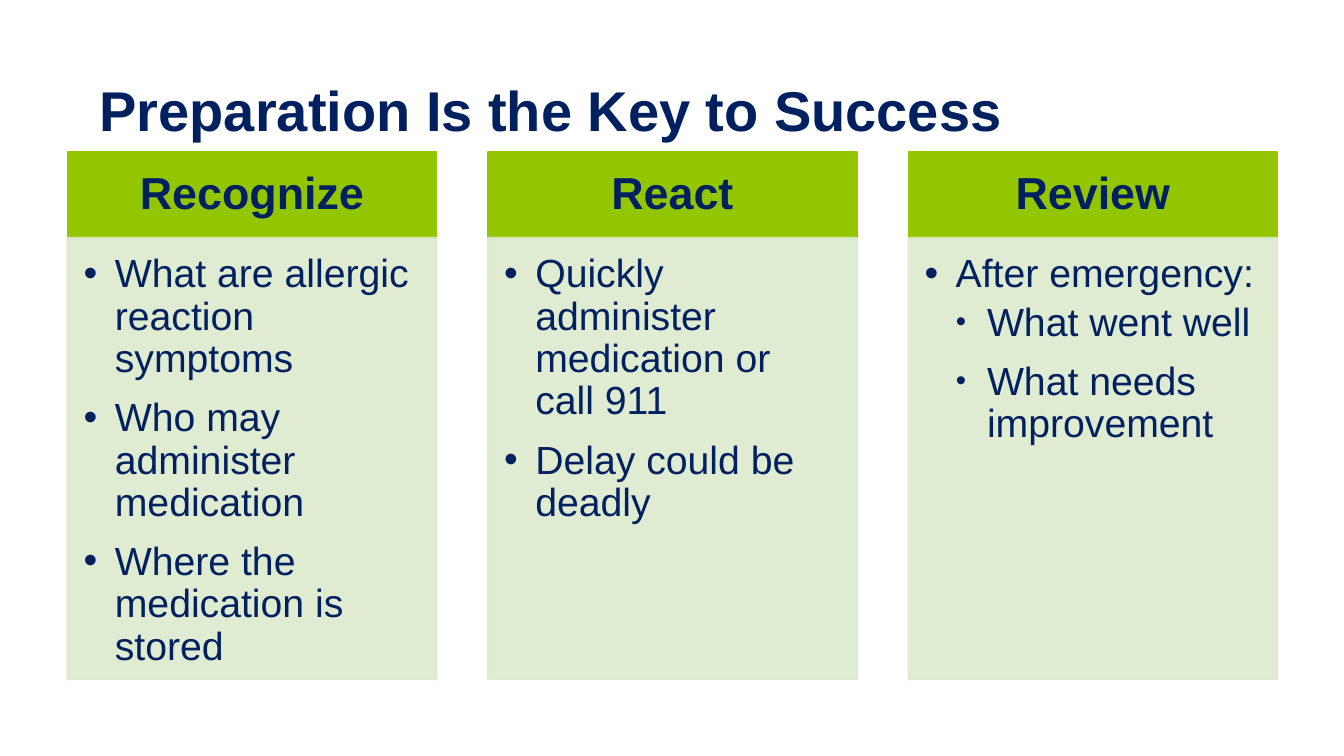
from dataclasses import dataclass

import lxml.etree
import pptx
import pptx.dml.color
import pptx.enum.shapes
import pptx.enum.text
import pptx.oxml.ns
import pptx.util

Inches = pptx.util.Inches
Pt = pptx.util.Pt
qn = pptx.oxml.ns.qn
RGB = pptx.dml.color.RGBColor.from_string
Anchor = pptx.enum.text.MSO_ANCHOR


@dataclass(frozen=True)
class Theme:
    navy: str = "002060"
    lime: str = "94C600"
    pale_green: str = "DCEACC"
    font: str = "Arial"
    title_size: int = 40
    heading_size: int = 32
    point_size: int = 28
    border: float = 1.25


@dataclass(frozen=True)
class Grid:
    left: float = 0.67
    top: float = 1.51
    column_width: float = 3.66
    gap: float = 0.51
    heading_height: float = 0.85
    points_height: float = 4.38

    def column_left(self, column: int) -> float:
        return self.left + column * (self.column_width + self.gap)


@dataclass(frozen=True)
class Point:
    text: str
    level: int = 1
    space_after: float = 12


@dataclass(frozen=True)
class Step:
    heading: str
    points: tuple[Point, ...]


THEME = Theme()
GRID = Grid()
INDENT = 0.31
LAST_SPACE = 4.2  # 15% of the point size

TITLE = "Preparation Is the Key to Success"
STEPS = (
    Step("Recognize", (
        Point("What are allergic reaction symptoms"),
        Point("Who may administer medication"),
        Point("Where the medication is stored", space_after=LAST_SPACE),
    )),
    Step("React", (
        Point("Quickly administer medication or call 911"),
        Point("Delay could be deadly", space_after=LAST_SPACE),
    )),
    Step("Review", (
        Point("After emergency:", space_after=LAST_SPACE),
        Point("What went well", level=2),
        Point("What needs improvement", level=2, space_after=LAST_SPACE),
    )),
)


def style_text(paragraph, size: int, bold: bool = False) -> None:
    for run in paragraph.runs:
        run.font.name = THEME.font
        run.font.size = Pt(size)
        run.font.bold = bold
        run.font.color.rgb = RGB(THEME.navy)


def set_frame(frame, anchor, insets: tuple[float, float, float, float]) -> None:
    frame.word_wrap = True
    frame.vertical_anchor = anchor
    (frame.margin_left, frame.margin_top,
     frame.margin_right, frame.margin_bottom) = map(Inches, insets)


def add_panel(slide, column: int, top: float, height: float, color: str):
    panel = slide.shapes.add_shape(
        pptx.enum.shapes.MSO_SHAPE.RECTANGLE,
        Inches(GRID.column_left(column)), Inches(top),
        Inches(GRID.column_width), Inches(height))
    panel.shadow.inherit = False
    panel.fill.solid()
    panel.fill.fore_color.rgb = RGB(color)
    panel.line.color.rgb = RGB(color)
    panel.line.width = Pt(THEME.border)
    return panel


def set_opacity(panel, percent: int) -> None:
    for color in panel._element.spPr.iter(qn("a:srgbClr")):
        lxml.etree.SubElement(color, qn("a:alpha"), val=str(percent * 1000))


def add_bullet(paragraph, level: int) -> None:
    properties = paragraph._p.get_or_add_pPr()
    properties.set("marL", str(Inches(INDENT * level)))
    properties.set("indent", str(Inches(-INDENT)))
    bullet_color = lxml.etree.SubElement(properties, qn("a:buClr"))
    lxml.etree.SubElement(bullet_color, qn("a:srgbClr"), val=THEME.navy)
    if level > 1:
        lxml.etree.SubElement(properties, qn("a:buSzPct"), val="75000")
    lxml.etree.SubElement(properties, qn("a:buFont"), typeface=THEME.font)
    lxml.etree.SubElement(properties, qn("a:buChar"), char="•")


def add_title(slide) -> None:
    title = slide.shapes.add_textbox(
        Inches(0.89), Inches(0.46), Inches(11.56), Inches(1.25))
    set_frame(title.text_frame, Anchor.MIDDLE, (0.1, 0.05, 0.1, 0.05))
    title.text_frame.text = TITLE
    style_text(title.text_frame.paragraphs[0], THEME.title_size, bold=True)


def add_step(slide, column: int, step: Step) -> None:
    # Heading band
    band = add_panel(slide, column, GRID.top, GRID.heading_height, THEME.lime)
    set_frame(band.text_frame, Anchor.MIDDLE, (0.25, 0.14, 0.25, 0.14))
    band.text_frame.text = step.heading
    heading = band.text_frame.paragraphs[0]
    heading.alignment = pptx.enum.text.PP_ALIGN.CENTER
    heading.line_spacing = 0.9
    style_text(heading, THEME.heading_size, bold=True)

    # Bulleted points
    body = add_panel(slide, column, GRID.top + GRID.heading_height,
                     GRID.points_height, THEME.pale_green)
    set_opacity(body, 90)
    set_frame(body.text_frame, Anchor.TOP, (0.16, 0.16, 0.22, 0.24))
    body.text_frame.text = "\n".join(point.text for point in step.points)
    for paragraph, point in zip(body.text_frame.paragraphs, step.points):
        add_bullet(paragraph, point.level)
        paragraph.level = point.level
        paragraph.alignment = pptx.enum.text.PP_ALIGN.LEFT
        paragraph.line_spacing = 0.9
        paragraph.space_after = Pt(point.space_after)
        style_text(paragraph, THEME.point_size)


def main() -> None:
    presentation = pptx.Presentation()
    presentation.slide_width = Inches(13.33)
    presentation.slide_height = Inches(7.5)
    slide = presentation.slides.add_slide(presentation.slide_layouts[6])
    add_title(slide)
    for column, step in enumerate(STEPS):
        add_step(slide, column, step)
    presentation.save("out.pptx")


if __name__ == "__main__":
    main()
